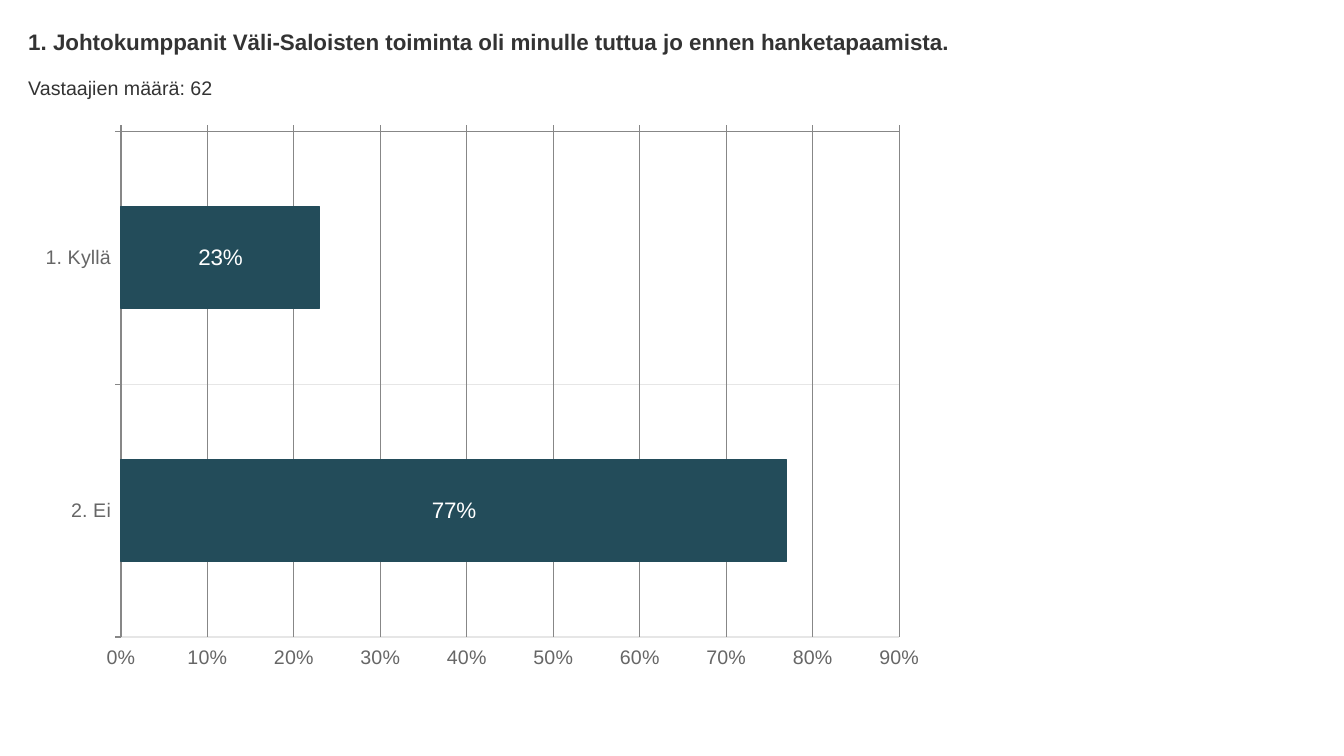
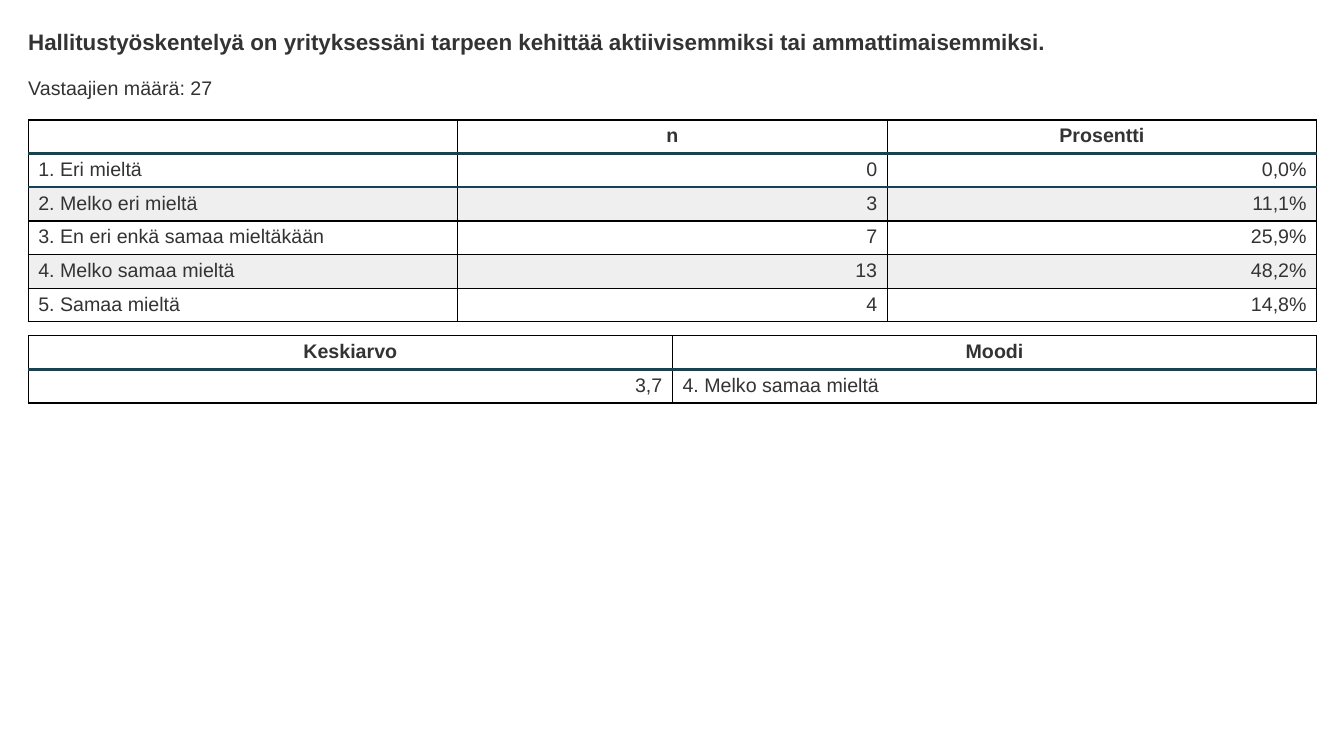
from pptx import Presentation
from pptx.chart.data import CategoryChartData
from pptx.dml.color import RGBColor
from pptx.enum.chart import (XL_CHART_TYPE as ChartType, XL_LABEL_POSITION as LabelPosition,
                             XL_TICK_LABEL_POSITION as TickLabels, XL_TICK_MARK as TickMark)
from pptx.enum.text import MSO_ANCHOR as Anchor, MSO_AUTO_SIZE as AutoSize, PP_ALIGN as Align
from pptx.oxml import parse_xml
from pptx.oxml.ns import nsdecls
from pptx.util import Inches, Pt

# Shared style
FONT = "Arial"
TEXT = RGBColor(0x33, 0x33, 0x33)
AXIS_TEXT = RGBColor(0x66, 0x66, 0x66)
AXIS_LINE = RGBColor(0x87, 0x87, 0x87)
LIGHT_GRID = RGBColor(0xE6, 0xE6, 0xE6)
BAR = RGBColor(0x23, 0x4C, 0x5A)
RULE = RGBColor(0x12, 0x44, 0x56)
BAND = RGBColor(0xEF, 0xEF, 0xEF)
WHITE = RGBColor(0xFF, 0xFF, 0xFF)
BLACK = RGBColor(0, 0, 0)

TITLE_SIZE, BODY_SIZE = 16, 14
LEFT, WIDTH = 0.28, 12.78
CONTENT_TOP = 1.19
CHART_WIDTH, CHART_HEIGHT = 9.03, 5.56
ROW_HEIGHT = 1 / 3


def style_font(font, size=BODY_SIZE, color=TEXT, bold=False):
    font.name, font.size, font.bold = FONT, Pt(size), bold
    font.color.rgb = color


def add_run(paragraph, text, **style):
    run = paragraph.add_run()
    run.text = text
    style_font(run.font, **style)


def add_text(slide, top, height, text, **style):
    box = slide.shapes.add_textbox(Inches(LEFT), Inches(top), Inches(WIDTH), Inches(height))
    frame = box.text_frame
    frame.word_wrap = True
    frame.auto_size = AutoSize.SHAPE_TO_FIT_TEXT
    frame.margin_left = frame.margin_right = frame.margin_top = frame.margin_bottom = 0
    add_run(frame.paragraphs[0], text, **style)


def add_question_slide(presentation, question, respondents):
    """Blank slide with the question and the number of respondents."""
    slide = presentation.slides.add_slide(presentation.slide_layouts[6])
    add_text(slide, 0.28, 0.27, question, size=TITLE_SIZE, bold=True)
    add_text(slide, 0.75, 0.23, f"Vastaajien määrä: {respondents}")
    return slide


# Chart
def style_axis(axis, grid_color, line_color):
    axis.has_major_gridlines = True
    for line, color in ((axis.major_gridlines.format.line, grid_color),
                        (axis.format.line, line_color)):
        line.color.rgb = color
        line.width = Pt(0.75)
    axis.major_tick_mark = TickMark.OUTSIDE
    axis.minor_tick_mark = TickMark.NONE
    style_font(axis.tick_labels.font, color=AXIS_TEXT)


def place_plot(chart, left, top, width, height):
    """Fix the inner plot area, given in inches within the chart."""
    fractions = {"x": left / CHART_WIDTH, "y": top / CHART_HEIGHT,
                 "w": width / CHART_WIDTH, "h": height / CHART_HEIGHT}
    parts = "".join(f'<c:{key} val="{value:.4f}"/>' for key, value in fractions.items())
    layout = parse_xml(
        f'<c:layout {nsdecls("c")}><c:manualLayout><c:layoutTarget val="inner"/>'
        f'<c:xMode val="edge"/><c:yMode val="edge"/>{parts}</c:manualLayout></c:layout>')
    plot_area = chart.plots[0]._element.getparent()
    for old in plot_area.xpath("c:layout"):
        plot_area.remove(old)
    plot_area.insert(0, layout)


def add_share_chart(slide, shares):
    data = CategoryChartData(number_format="0%")
    data.categories = list(shares)
    data.add_series("Series 1", list(shares.values()))
    chart = slide.shapes.add_chart(ChartType.BAR_CLUSTERED, Inches(LEFT), Inches(CONTENT_TOP),
                                   Inches(CHART_WIDTH), Inches(CHART_HEIGHT), data).chart
    chart.has_title = chart.has_legend = False
    style_font(chart.font)
    place_plot(chart, 0.92, 0.11, 7.72, 5.02)

    # Axes: first answer on top, percentages at the bottom
    style_axis(chart.category_axis, LIGHT_GRID, AXIS_LINE)
    chart.category_axis.reverse_order = True
    chart.category_axis.tick_label_position = TickLabels.LOW
    values = chart.value_axis
    style_axis(values, AXIS_LINE, AXIS_LINE)
    values.tick_label_position = TickLabels.HIGH
    values.minimum_scale, values.maximum_scale, values.major_unit = 0, 0.9, 0.1
    values.tick_labels.number_format = "0%"
    values.tick_labels.number_format_is_linked = False

    # Bars and their labels
    plot = chart.plots[0]
    plot.vary_by_categories = False
    plot.gap_width = 150
    bars = plot.series[0].format
    bars.fill.solid()
    bars.fill.fore_color.rgb = bars.line.color.rgb = BAR
    bars.line.width = Pt(0.75)
    plot.has_data_labels = True
    labels = plot.data_labels
    labels.show_value = True
    labels.number_format, labels.number_format_is_linked = "0%", False
    labels.position = LabelPosition.CENTER
    style_font(labels.font, size=TITLE_SIZE, color=WHITE)


# Tables
def add_border(cell, side, color, width):
    cell._tc.get_or_add_tcPr().append(parse_xml(
        f'<a:ln{side} {nsdecls("a")} w="{Pt(width)}"><a:solidFill><a:srgbClr val="{color}"/>'
        f'</a:solidFill></a:ln{side}>'))


def fill_cell(cell, text, align, bold, banded, rule_above, rule_below):
    for side, is_rule in (("L", False), ("R", False), ("T", rule_above), ("B", rule_below)):
        add_border(cell, side, *((RULE, 2) if is_rule else (BLACK, 1)))
    if banded:
        cell.fill.solid()
        cell.fill.fore_color.rgb = BAND
    else:
        cell.fill.background()
    cell.vertical_anchor = Anchor.TOP
    paragraph = cell.text_frame.paragraphs[0]
    paragraph.alignment = align
    if text:
        add_run(paragraph, text, bold=bold)
    else:
        # An empty cell must not stretch its row
        paragraph._p.append(parse_xml(
            f'<a:endParaRPr {nsdecls("a")} sz="{BODY_SIZE * 100}"/>'))


def add_table(slide, top, rows, alignments, ruled_rows):
    """Table with a centred header; ruled_rows have a thick line below them."""
    table = slide.shapes.add_table(len(rows), len(alignments), Inches(LEFT), Inches(top),
                                   Inches(WIDTH), Inches(ROW_HEIGHT * len(rows))).table
    table.horz_banding = False
    for r, row in enumerate(rows):
        is_header = r == 0
        for c, text in enumerate(row):
            fill_cell(table.cell(r, c), text, Align.CENTER if is_header else alignments[c],
                      bold=is_header, banded=r > 0 and r % 2 == 0,
                      rule_above=r - 1 in ruled_rows, rule_below=r in ruled_rows)


def main():
    presentation = Presentation()
    presentation.slide_width, presentation.slide_height = Inches(13.33), Inches(7.5)

    # Familiarity with the project
    slide = add_question_slide(
        presentation,
        "1. Johtokumppanit Väli-Saloisten toiminta oli minulle tuttua jo ennen hanketapaamista.",
        62)
    add_share_chart(slide, {"1. Kyllä": 0.23, "2. Ei": 0.77})

    # Need to develop board work
    slide = add_question_slide(
        presentation,
        "Hallitustyöskentelyä on yrityksessäni tarpeen kehittää aktiivisemmiksi "
        "tai ammattimaisemmiksi.",
        27)
    answers = [
        ("", "n", "Prosentti"),
        ("1. Eri mieltä", "0", "0,0%"),
        ("2. Melko eri mieltä", "3", "11,1%"),
        ("3. En eri enkä samaa mieltäkään", "7", "25,9%"),
        ("4. Melko samaa mieltä", "13", "48,2%"),
        ("5. Samaa mieltä", "4", "14,8%"),
    ]
    add_table(slide, CONTENT_TOP, answers, (Align.LEFT, Align.RIGHT, Align.RIGHT), (0, 1))
    summary = [("Keskiarvo", "Moodi"), ("3,7", "4. Melko samaa mieltä")]
    add_table(slide, 3.33, summary, (Align.RIGHT, Align.LEFT), (0,))

    presentation.save("out.pptx")


if __name__ == "__main__":
    main()
